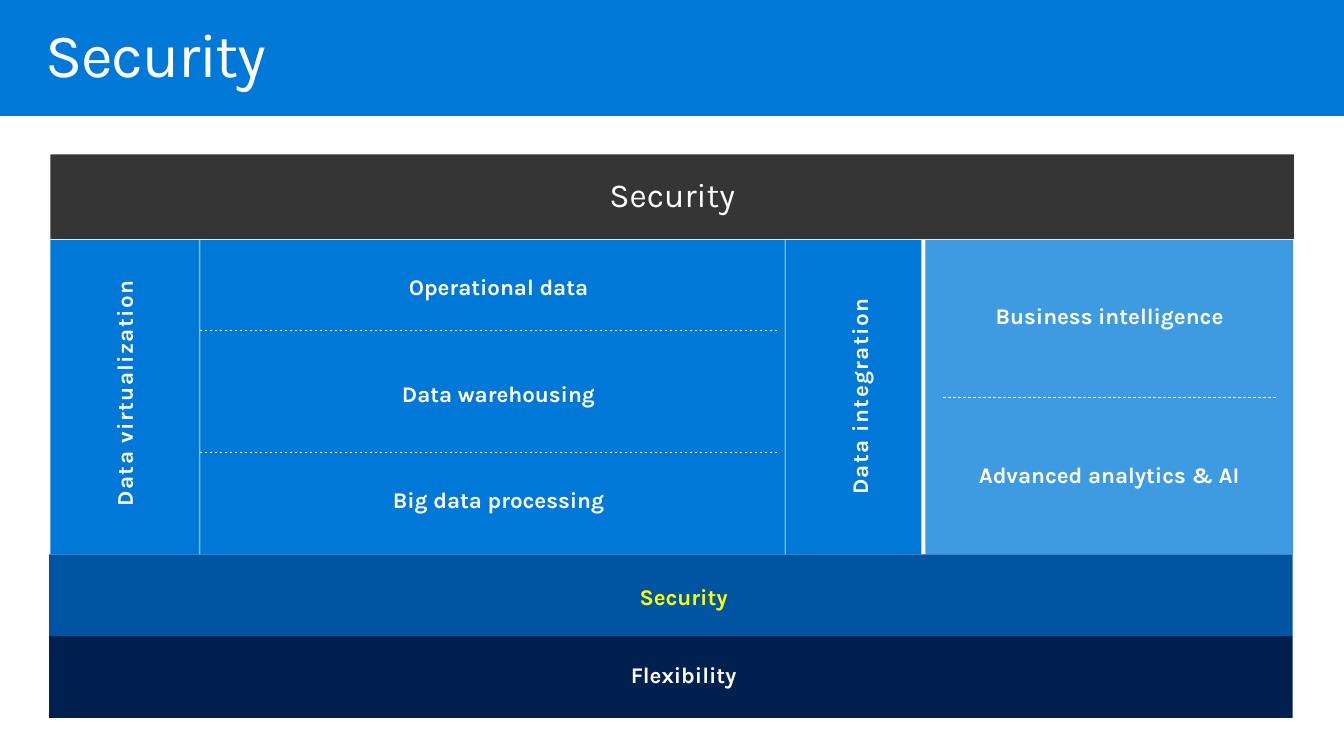
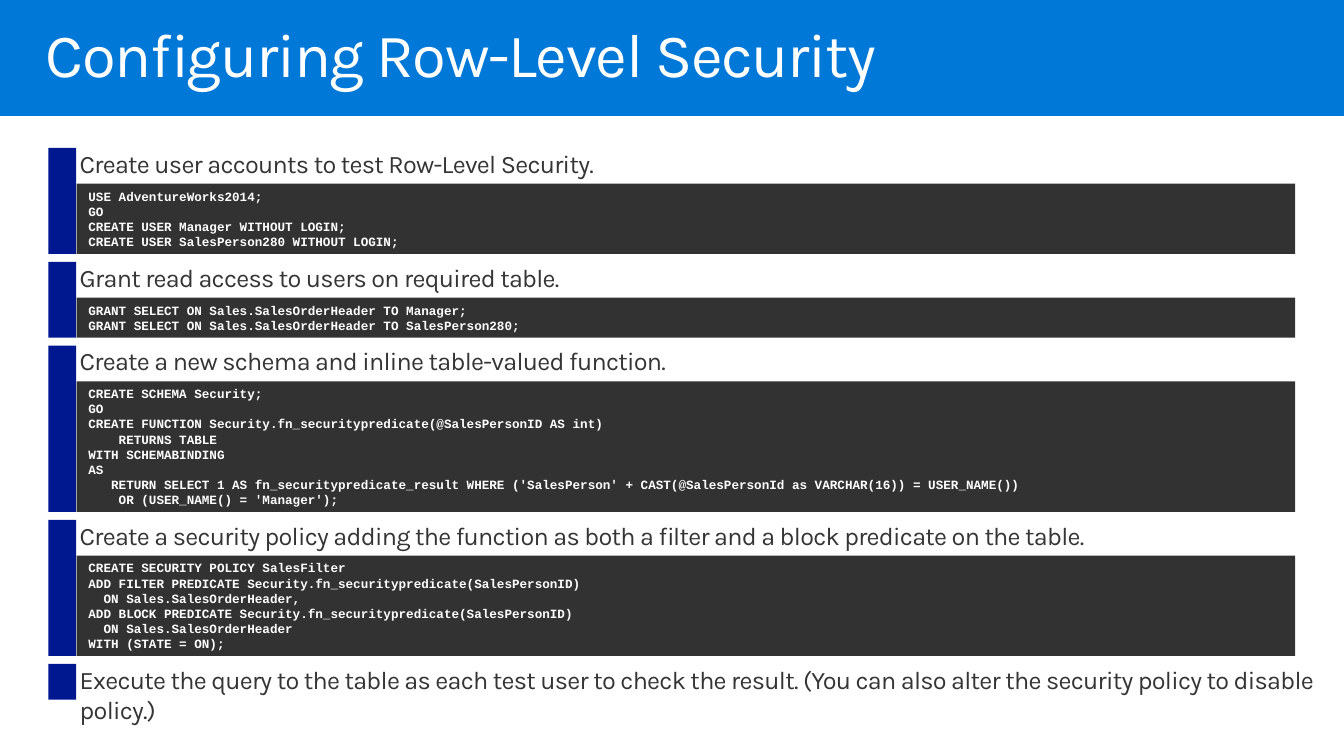
"""Build two slides on database security: a platform diagram and row-level security steps."""
from dataclasses import dataclass

from lxml import etree
from pptx import Presentation
from pptx.dml.color import RGBColor
from pptx.enum.dml import MSO_LINE
from pptx.enum.shapes import MSO_CONNECTOR, MSO_SHAPE
from pptx.enum.text import MSO_ANCHOR, MSO_AUTO_SIZE, PP_ALIGN
from pptx.oxml.ns import qn
from pptx.util import Cm, Pt

RECTANGLE = MSO_SHAPE.RECTANGLE
STRAIGHT = MSO_CONNECTOR.STRAIGHT
DASH = MSO_LINE.DASH
TOP, MIDDLE = MSO_ANCHOR.TOP, MSO_ANCHOR.MIDDLE
LEFT, CENTER = PP_ALIGN.LEFT, PP_ALIGN.CENTER
NO_AUTOFIT = MSO_AUTO_SIZE.NONE

SLIDE_WIDTH, SLIDE_HEIGHT = 33.87, 19.05
TITLE_ONLY_LAYOUT = 5
WHITE, YELLOW = "FFFFFF", "FFFF00"
BLUE, LIGHT_BLUE, DEEP_BLUE, NAVY = "0078D7", "3E9AE1", "0055A2", "002050"
MARKER_BLUE, CHARCOAL, CODE_GREY = "00188F", "353535", "323232"


@dataclass(frozen=True)
class TextStyle:
    """Character and paragraph formatting."""
    size: float
    color: str = WHITE
    font: str = "Karla"
    bold: bool = False
    spacing: float = 0
    align: PP_ALIGN = LEFT
    line_spacing: float = 1.0


@dataclass(frozen=True)
class Box:
    """Position and size in centimetres."""
    left: float
    top: float
    width: float
    height: float


@dataclass(frozen=True)
class Frame:
    """Text frame settings, with insets in centimetres."""
    insets: tuple[float, float, float, float] = (0, 0, 0, 0)
    anchor: MSO_ANCHOR = MIDDLE
    direction: str = "horz"


@dataclass(frozen=True)
class Label:
    """A piece of text on the platform diagram."""
    text: str
    box: Box
    frame: Frame
    style: TextStyle


@dataclass(frozen=True)
class Divider:
    """A line between two areas of the diagram."""
    start: tuple[float, float]
    end: tuple[float, float]
    dashed: bool = True


@dataclass(frozen=True)
class Step:
    """An instruction and the code that carries it out."""
    caption: str
    code: tuple[str, ...] = ()


TITLE_STYLE = TextStyle(44, spacing=-1, line_spacing=0.9)
HEADER_STYLE = TextStyle(24, align=CENTER, line_spacing=0.9)
LABEL_STYLE = TextStyle(16, bold=True, align=CENTER)
HIGHLIGHT_STYLE = TextStyle(16, YELLOW, bold=True, align=CENTER)
VERTICAL_STYLE = TextStyle(16, bold=True, spacing=1, align=CENTER)
CAPTION_STYLE = TextStyle(18, CHARCOAL, spacing=-0.5)
CODE_STYLE = TextStyle(9, font="Courier New", bold=True)

TITLE_FRAME = Frame((0.41, 0.25, 0.41, 0.25), TOP)
HEADER_FRAME = Frame((0.51, 0.41, 0.51, 0.41))
ROW_FRAME = Frame((0.64, 0.25, 0, 0))
PANEL_FRAME = Frame((0.38, 0.25, 0.38, 0.25))
VERTICAL_FRAME = Frame((0.25, 0.13, 0.25, 0.13), direction="vert270")
CAPTION_FRAME = Frame(anchor=TOP)
CODE_FRAME = Frame((0.3, 0, 0.25, 0))

TITLE_BAND = Box(0, 0, SLIDE_WIDTH, 2.92)
TITLE_BOX = Box(0.74, 0.36, 32.39, 2.49)
HEADER_BOX = Box(1.27, 3.89, 31.34, 2.14)
PANEL_TOP, PANEL_BOTTOM = 6.05, 13.97
PANEL_HEIGHT = PANEL_BOTTOM - PANEL_TOP
BAND_LEFT, BAND_WIDTH, BAND_HEIGHT = 1.24, 31.34, 2.06
ROW_HEIGHT = 0.94

PANELS = [
    (Box(1.27, PANEL_TOP, 21.95, PANEL_HEIGHT), BLUE),
    (Box(23.32, PANEL_TOP, 9.27, PANEL_HEIGHT), LIGHT_BLUE),
    (Box(BAND_LEFT, PANEL_BOTTOM + BAND_HEIGHT, BAND_WIDTH, BAND_HEIGHT), NAVY),
    (Box(BAND_LEFT, PANEL_BOTTOM, BAND_WIDTH, BAND_HEIGHT), DEEP_BLUE),
]
DATA_ROWS = ("Operational data", "Data warehousing", "Big data processing")
LABELS = [
    *(Label(text, Box(1.27, 6.63 + 2.68 * index, 21.95, ROW_HEIGHT), ROW_FRAME, LABEL_STYLE)
      for index, text in enumerate(DATA_ROWS)),
    Label("Data virtualization", Box(1.27, 5.89, 3.71, 8.05), VERTICAL_FRAME, VERTICAL_STYLE),
    Label("Data integration", Box(20.09, 6.05, 3.12, 7.9), VERTICAL_FRAME, VERTICAL_STYLE),
    Label("Business intelligence", Box(23.34, 5.89, 9.25, 4.11), PANEL_FRAME, LABEL_STYLE),
    Label("Advanced analytics & AI", Box(23.32, 9.98, 9.27, 3.96), PANEL_FRAME, LABEL_STYLE),
    Label("Security", Box(BAND_LEFT, 14.43, BAND_WIDTH, ROW_HEIGHT), ROW_FRAME, HIGHLIGHT_STYLE),
    Label("Flexibility", Box(BAND_LEFT, 16.41, BAND_WIDTH, ROW_HEIGHT), ROW_FRAME, LABEL_STYLE),
]
DIVIDERS = [
    *(Divider((5.03, y), (19.63, y)) for y in (8.33, 11.4)),
    Divider((23.77, 10.01), (32.16, 10.01)),
    *(Divider((x, PANEL_TOP), (x, PANEL_BOTTOM), dashed=False) for x in (5.03, 19.79)),
]

STEPS = [
    Step("Create user accounts to test Row-Level Security.", (
        "USE AdventureWorks2014;",
        "GO",
        "CREATE USER Manager WITHOUT LOGIN;",
        "CREATE USER SalesPerson280 WITHOUT LOGIN;",
    )),
    Step("Grant read access to users on required table.", (
        "GRANT SELECT ON Sales.SalesOrderHeader TO Manager;",
        "GRANT SELECT ON Sales.SalesOrderHeader TO SalesPerson280;",
    )),
    Step("Create a new schema and inline table-valued function.", (
        "CREATE SCHEMA Security;",
        "GO",
        "CREATE FUNCTION Security.fn_securitypredicate(@SalesPersonID AS int)",
        "    RETURNS TABLE",
        "WITH SCHEMABINDING",
        "AS",
        "   RETURN SELECT 1 AS fn_securitypredicate_result WHERE "
        "('SalesPerson' + CAST(@SalesPersonId as VARCHAR(16)) = USER_NAME())",
        "    OR (USER_NAME() = 'Manager');",
    )),
    Step("Create a security policy adding the function as both a filter and "
         "a block predicate on the table.", (
             "CREATE SECURITY POLICY SalesFilter",
             "ADD FILTER PREDICATE Security.fn_securitypredicate(SalesPersonID)",
             "  ON Sales.SalesOrderHeader,",
             "ADD BLOCK PREDICATE Security.fn_securitypredicate(SalesPersonID)",
             "  ON Sales.SalesOrderHeader",
             "WITH (STATE = ON);",
         )),
    Step("Execute the query to the table as each test user to check the result. "
         "(You can also alter the security policy to disable policy.)"),
]
STEPS_TOP, STEP_GAP = 3.73, 0.2
CAPTION_HEIGHT, CODE_PADDING, CODE_LINE = 0.9, 0.25, 0.38
MARKER_LEFT, MARKER_WIDTH = 1.22, 0.7
CAPTION_LEFT, CAPTION_WIDTH = 2.01, 31.67
CODE_LEFT, CODE_WIDTH = 1.93, 30.71


def rgb(color: str) -> RGBColor:
    """Turn a hex string into a colour."""
    return RGBColor.from_string(color)


def lengths(box: Box) -> tuple[Cm, Cm, Cm, Cm]:
    """Give the position and size of a box as lengths."""
    return Cm(box.left), Cm(box.top), Cm(box.width), Cm(box.height)


def format_frame(shape, frame: Frame) -> None:
    """Set the insets, anchor and direction of a shape's text."""
    text_frame = shape.text_frame
    text_frame.word_wrap = True
    text_frame.auto_size = NO_AUTOFIT
    text_frame.vertical_anchor = frame.anchor
    left, top, right, bottom = (Cm(inset) for inset in frame.insets)
    text_frame.margin_left, text_frame.margin_top = left, top
    text_frame.margin_right, text_frame.margin_bottom = right, bottom
    text_frame._txBody.bodyPr.set("vert", frame.direction)


def write_text(shape, lines: tuple[str, ...], style: TextStyle) -> None:
    """Write one paragraph per line in the given style."""
    text_frame = shape.text_frame
    for index, line in enumerate(lines):
        paragraph = text_frame.add_paragraph() if index else text_frame.paragraphs[0]
        paragraph.alignment = style.align
        paragraph.line_spacing = style.line_spacing
        run = paragraph.add_run()
        run.text = line
        run.font.name = style.font
        run.font.size = Pt(style.size)
        run.font.bold = style.bold
        run.font.color.rgb = rgb(style.color)
        if style.spacing:
            run._r.get_or_add_rPr().set("spc", str(int(style.spacing * 100)))


def add_rectangle(slide, box: Box, color: str):
    """Add a plain filled rectangle."""
    shape = slide.shapes.add_shape(RECTANGLE, *lengths(box))
    shape.shadow.inherit = False
    shape.fill.solid()
    shape.fill.fore_color.rgb = rgb(color)
    shape.line.fill.background()
    return shape


def add_label(slide, label: Label) -> None:
    """Add a text box."""
    shape = slide.shapes.add_textbox(*lengths(label.box))
    format_frame(shape, label.frame)
    write_text(shape, (label.text,), label.style)


def add_divider(slide, divider: Divider) -> None:
    """Add a thin dashed line or a half-transparent solid one."""
    points = (Cm(value) for value in (*divider.start, *divider.end))
    connector = slide.shapes.add_connector(STRAIGHT, *points)
    connector.line.color.rgb = rgb(WHITE)
    properties = connector._element.spPr
    if divider.dashed:
        connector.line.width = Pt(0.5)
        connector.line.dash_style = DASH
    else:
        connector.line.width = Pt(1)
        color = next(properties.iter(qn("a:srgbClr")))
        etree.SubElement(color, qn("a:alpha")).set("val", "50000")
    etree.SubElement(properties, qn("a:effectLst"))


def add_titled_slide(presentation, title: str):
    """Add a slide with its title."""
    slide = presentation.slides.add_slide(presentation.slide_layouts[TITLE_ONLY_LAYOUT])
    write_text(slide.shapes.title, (title,), TITLE_STYLE)
    return slide


def style_layout(presentation, slide) -> None:
    """Give the layout its title band and title position."""
    layout = presentation.slide_layouts[TITLE_ONLY_LAYOUT]
    title = layout.placeholders[0]
    title.left, title.top, title.width, title.height = lengths(TITLE_BOX)
    format_frame(title, TITLE_FRAME)
    band = add_rectangle(slide, TITLE_BAND, BLUE)
    layout.shapes._spTree.insert(2, band._element)


def draw_platform(slide) -> None:
    """Draw the platform diagram."""
    for box, color in PANELS:
        add_rectangle(slide, box, color)
    for divider in DIVIDERS:
        add_divider(slide, divider)
    for label in LABELS:
        add_label(slide, label)
    header = add_rectangle(slide, HEADER_BOX, CHARCOAL)
    format_frame(header, HEADER_FRAME)
    write_text(header, ("Security",), HEADER_STYLE)


def draw_steps(slide) -> None:
    """Stack the steps, each as tall as its code needs."""
    top = STEPS_TOP
    for step in STEPS:
        code_height = CODE_PADDING + CODE_LINE * len(step.code) if step.code else 0
        height = CAPTION_HEIGHT + code_height
        add_rectangle(slide, Box(MARKER_LEFT, top, MARKER_WIDTH, height), MARKER_BLUE)
        caption_box = Box(CAPTION_LEFT, top, CAPTION_WIDTH, CAPTION_HEIGHT)
        add_label(slide, Label(step.caption, caption_box, CAPTION_FRAME, CAPTION_STYLE))
        if step.code:
            code_box = Box(CODE_LEFT, top + CAPTION_HEIGHT, CODE_WIDTH, code_height)
            code = add_rectangle(slide, code_box, CODE_GREY)
            format_frame(code, CODE_FRAME)
            write_text(code, step.code, CODE_STYLE)
        top += height + STEP_GAP


def main() -> None:
    """Build and save the presentation."""
    presentation = Presentation()
    presentation.slide_width, presentation.slide_height = Cm(SLIDE_WIDTH), Cm(SLIDE_HEIGHT)
    platform = add_titled_slide(presentation, "Security")
    style_layout(presentation, platform)
    draw_platform(platform)
    draw_steps(add_titled_slide(presentation, "Configuring Row-Level Security"))
    presentation.save("out.pptx")


if __name__ == "__main__":
    main()
